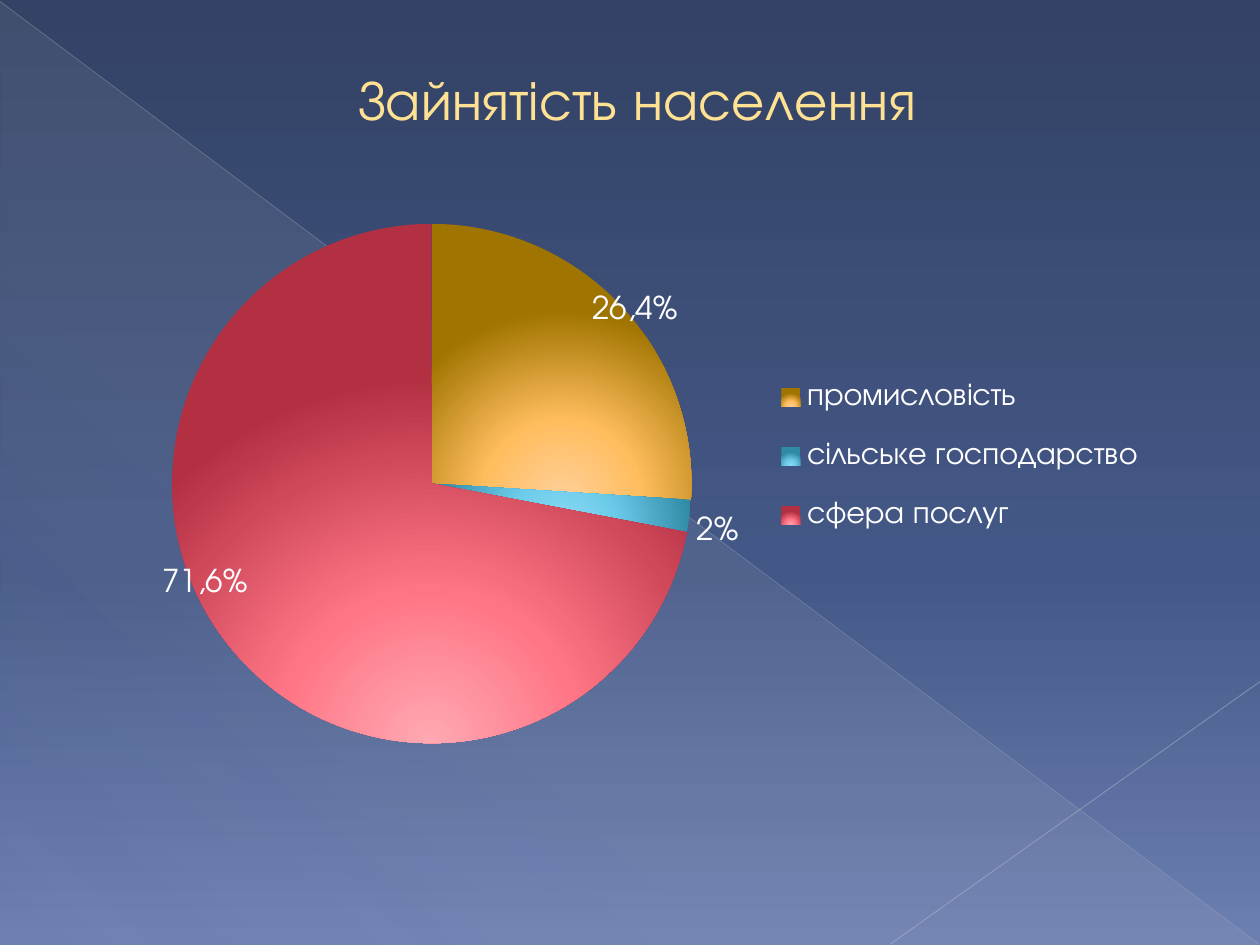
from lxml import etree
from pptx import Presentation
from pptx.chart.data import CategoryChartData
from pptx.dml.color import RGBColor
from pptx.enum.chart import XL_CHART_TYPE, XL_LABEL_POSITION, XL_LEGEND_POSITION
from pptx.enum.shapes import MSO_CONNECTOR, MSO_SHAPE
from pptx.oxml import parse_xml
from pptx.oxml.ns import nsdecls, qn
from pptx.util import Cm, Pt

PIE = XL_CHART_TYPE.PIE
BEST_FIT = XL_LABEL_POSITION.BEST_FIT
RIGHT = XL_LEGEND_POSITION.RIGHT
STRAIGHT = MSO_CONNECTOR.STRAIGHT
RT_TRIANGLE = MSO_SHAPE.RIGHT_TRIANGLE

FONT = "TeX Gyre Adventor"
TITLE = "Зайнятість населення"
CHART_W, CHART_H = 22.86, 15.98
RADIAL = ('<a:path path="circle">'
          '<a:fillToRect l="50000" t="100000" r="50000" b="0"/></a:path>')


def set_font(font, size, colour):
    font.name, font.size, font.bold = FONT, Pt(size), False
    font.color.rgb = RGBColor.from_string(colour)


def set_gradient(element, stops, direction):
    """Replace the first solid fill by stops of (percent, colour, opacity)."""
    gs = "".join(f'<a:gs pos="{pos * 1000}"><a:srgbClr val="{colour}">'
                 f'<a:alpha val="{alpha * 1000}"/></a:srgbClr></a:gs>'
                 for pos, colour, alpha in stops)
    old = next(element.iter(qn("a:solidFill")))
    old.getparent().replace(old, parse_xml(
        f'<a:gradFill rotWithShape="1" {nsdecls("a")}>'
        f"<a:gsLst>{gs}</a:gsLst>{direction}</a:gradFill>"))


prs = Presentation()
prs.slide_width, prs.slide_height = Cm(25.4), Cm(19.05)
s = prs.slides.add_slide(prs.slide_layouts[6])

# Background and its decoration
s.background.fill.solid()
set_gradient(s.element,
             [(0, "334265", 100), (60, "445887", 100), (100, "6C7FB1", 100)],
             '<a:lin ang="5400000" scaled="0"/>')

sp = s.shapes.add_shape(RT_TRIANGLE, Cm(0.02), Cm(0.04), Cm(25.36), Cm(19))
sp.shadow.inherit = False
sp.line.fill.background()
sp.fill.solid()
set_gradient(sp.element,
             [(0, "D4D4D6", 10), (70, "D4D4D6", 8), (100, "D4D4D6", 1)],
             '<a:lin ang="7980000" scaled="0"/>')

diagonals = [
    (0, 0.03, 25.38, 19.03, "B9BDC8", 0.39, 35),
    (25.4, 13.74, 17.95, 19.03, "C1C4CE", 0.47, 45),
]
for x1, y1, x2, y2, colour, width, alpha in diagonals:
    line = s.shapes.add_connector(STRAIGHT, Cm(x1), Cm(y1), Cm(x2), Cm(y2))
    line.line.width = Pt(width)
    line.line.color.rgb = RGBColor.from_string(colour)
    clr = next(line.element.iter(qn("a:srgbClr")))
    etree.SubElement(clr, qn("a:alpha")).set("val", str(alpha * 1000))
    etree.SubElement(line.element.spPr, qn("a:effectLst"))

# Employment pie: category, value, own label, gradient from centre to edge
sectors = [
    ("промисловість", 26, "26,4%", ("FFD09A", "FFBD5E", "A07400")),
    ("сільське господарство", 2, None, ("8EDCF5", "6DCBEA", "2F8AA5")),
    ("сфера послуг", 72, "71,6%", ("FFA9B3", "FF7585", "B32F42")),
]
data = CategoryChartData()
data.categories = [sector[0] for sector in sectors]
data.add_series(TITLE, [sector[1] for sector in sectors])
chart = s.shapes.add_chart(PIE, Cm(1.3), Cm(1.12), Cm(CHART_W), Cm(CHART_H),
                           data).chart
set_font(chart.font, 18, "FFFFFF")

chart.has_title = True
chart.chart_title.text_frame.text = TITLE
set_font(chart.chart_title.text_frame.paragraphs[0].runs[0].font, 32, "FFE193")
chart.chart_title.include_in_layout = False

chart.has_legend = True
chart.legend.position = RIGHT
chart.legend.include_in_layout = False
set_font(chart.legend.font, 18, "FFFFFF")

plot = chart.plots[0]
plot.vary_by_categories = True
plot.has_data_labels = True
labels = plot.series[0].data_labels
labels.show_percentage, labels.show_value = True, False
labels.number_format, labels.number_format_is_linked = "0%", False
labels.position = BEST_FIT
set_font(labels.font, 18, "FFFFFF")

for i, (_, _, text, colours) in enumerate(sectors):
    point = plot.series[0].points[i]
    point.format.fill.solid()
    point.format.line.fill.background()
    set_gradient(list(chart.element.iter(qn("c:dPt")))[i],
                 [(pos, c, 100) for pos, c in zip((0, 42, 100), colours)],
                 RADIAL)
    if text:
        tf = point.data_label.text_frame
        tf.text = text
        set_font(tf.paragraphs[0].runs[0].font, 18, "FFFFFF")
        point.data_label.position = BEST_FIT

# Fixed places in cm within the chart; the labels are moved by an offset
EDGE = '<c:xMode val="edge"/><c:yMode val="edge"/>'
INNER = '<c:layoutTarget val="inner"/>'
industry_label, services_label = chart.element.iter(qn("c:dLbl"))
frames = [
    (next(chart.element.iter(qn("c:title"))), 1, EDGE, (5.72, 0.12)),
    (next(chart.element.iter(qn("c:plotArea"))), 0, INNER + EDGE,
     (2.17, 3.39, 10.47, 10.48)),
    (next(chart.element.iter(qn("c:legend"))), 1, EDGE, (14.04, 6, 8, 4.15)),
    (industry_label, 1, "", (-0.69, 0.52)),
    (services_label, 1, "", (0.44, -1.71)),
]
for parent, index, modes, box in frames:
    sizes = "".join(f'<c:{k} val="{v / full:.4f}"/>' for k, v, full
                    in zip("xywh", box, (CHART_W, CHART_H) * 2))
    for old in parent.findall(qn("c:layout")):
        parent.remove(old)
    parent.insert(index, parse_xml(
        f'<c:layout {nsdecls("c")}><c:manualLayout>{modes}{sizes}'
        "</c:manualLayout></c:layout>"))

prs.save("out.pptx")
